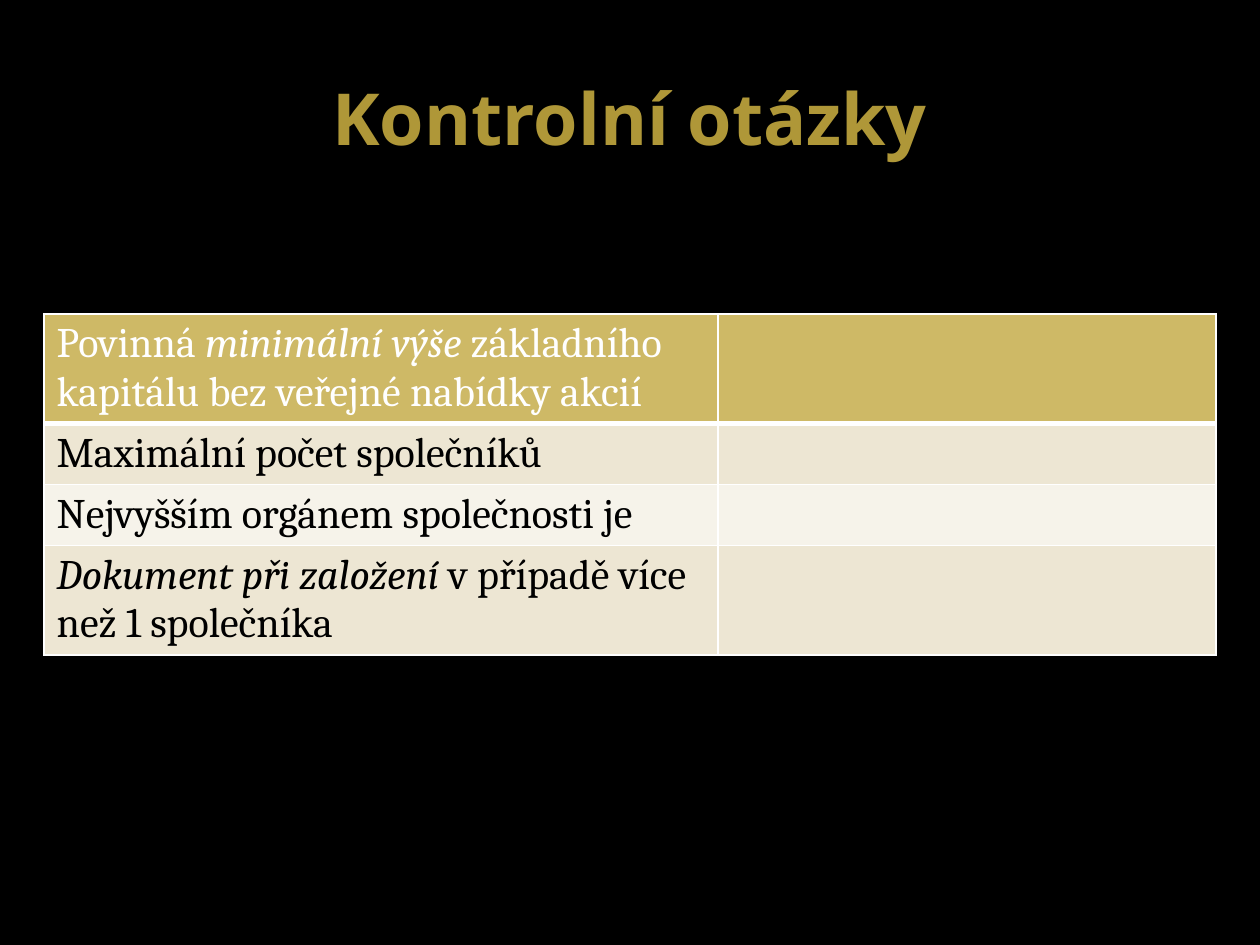
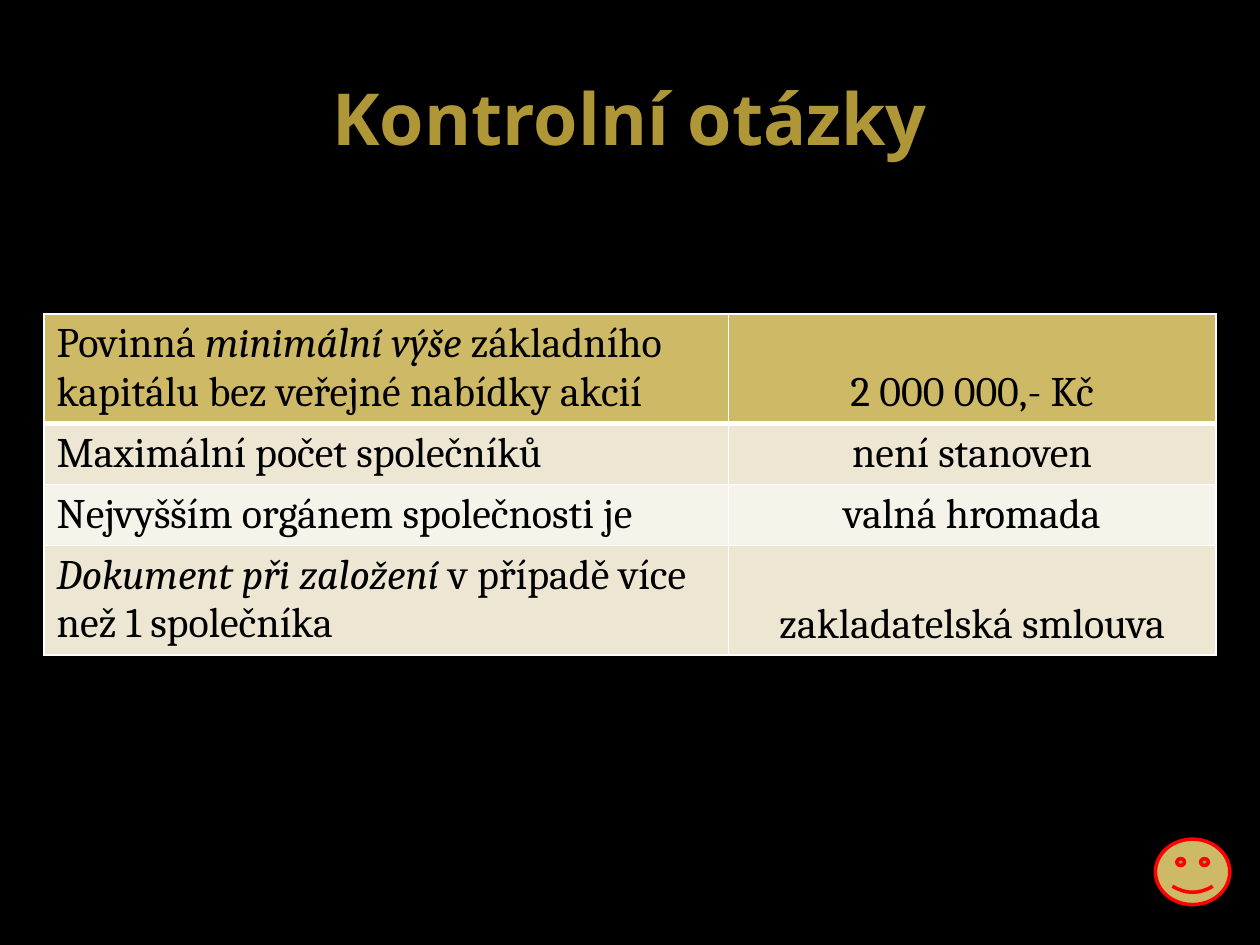
from collections import namedtuple
from dataclasses import dataclass

from lxml.etree import SubElement
from pptx import Presentation
from pptx.dml.color import RGBColor
from pptx.enum.shapes import MSO_SHAPE
from pptx.enum.text import MSO_ANCHOR, PP_ALIGN
from pptx.oxml.ns import qn
from pptx.util import Inches, Pt

Box = namedtuple("Box", "left top width height")


@dataclass(frozen=True)
class Theme:
    background: str = "000000"
    title: str = "AF9738"
    gold: str = "CEB966"
    sand: str = "EDE6D3"
    ivory: str = "F6F3EA"
    dark: str = "000000"
    light: str = "FFFFFF"
    red: str = "FF0000"
    title_font: str = "Open Sans"
    body_font: str = "Cambria"
    title_size: int = 41
    body_size: int = 24
    thin: int = 1
    thick: int = 3


THEME = Theme()
TITLE_BOX = Box(0.5, 0.3, 9, 1.25)
TABLE_BOX = Box(0.35, 2.49, 9.3, 2.7)
SMILEY_BOX = Box(9.17, 6.66, 0.59, 0.52)
ROW_HEIGHTS = (0.87, 0.48, 0.48, 0.87)
ROW_FILLS = (THEME.gold, THEME.sand, THEME.ivory, THEME.sand)

# Asterisks enclose italic words
QUESTIONS = (
    "Povinná *minimální výše *základního kapitálu bez veřejné nabídky akcií",
    "Maximální počet společníků",
    "Nejvyšším orgánem společnosti je",
    "*Dokument při založení *v případě více než 1 společníka",
)
ANSWERS = ("2 000 000,- Kč", "není stanoven", "valná hromada", "zakladatelská smlouva")
NO_ANSWERS = ("",) * len(QUESTIONS)


def colour(value):
    return RGBColor.from_string(value)


def paint(fill, value):
    fill.solid()
    fill.fore_color.rgb = colour(value)


def write(frame, text, *, font=THEME.body_font, size=THEME.body_size,
          ink=THEME.dark, bold=False, align=PP_ALIGN.LEFT):
    para = frame.paragraphs[0]
    para.alignment = align
    for index, part in enumerate(text.split("*")):
        if part:
            span = para.add_run()
            span.text = part
            span.font.name = font
            span.font.size = Pt(size)
            span.font.bold = bold
            span.font.italic = index % 2 == 1
            span.font.color.rgb = colour(ink)


def set_borders(cell, **widths):
    properties = cell._tc.get_or_add_tcPr()
    for side in "LRTB":
        line = SubElement(properties, qn(f"a:ln{side}"),
                          w=str(Pt(widths.get(side, THEME.thin))))
        fill = SubElement(line, qn("a:solidFill"))
        SubElement(fill, qn("a:srgbClr"), val=THEME.light)


def add_title(page, box, text):
    title = page.shapes.title
    title.left, title.top, title.width, title.height = map(Inches, box)
    title.text_frame.vertical_anchor = MSO_ANCHOR.MIDDLE
    write(title.text_frame, text, font=THEME.title_font, size=THEME.title_size,
          ink=THEME.title, bold=True, align=PP_ALIGN.CENTER)


def add_quiz_table(page, box, answers, question_width, header_ink):
    table = page.shapes.add_table(len(QUESTIONS), 2, *map(Inches, box)).table
    table.first_row = table.horz_banding = False
    table.columns[0].width = Inches(question_width)
    table.columns[1].width = Inches(box.width - question_width)

    for index, pair in enumerate(zip(QUESTIONS, answers)):
        table.rows[index].height = Inches(ROW_HEIGHTS[index])
        # A thick rule separates the first row from the rest
        rule = {0: {"B": THEME.thick}, 1: {"T": THEME.thick}}.get(index, {})
        ink = header_ink if index == 0 else THEME.dark
        for column, text in enumerate(pair):
            cell = table.cell(index, column)
            set_borders(cell, **rule)
            paint(cell.fill, ROW_FILLS[index])
            cell.vertical_anchor = MSO_ANCHOR.BOTTOM if column else MSO_ANCHOR.TOP
            write(cell.text_frame, text, ink=ink,
                  align=PP_ALIGN.CENTER if column else PP_ALIGN.LEFT)


def add_smiley(page, box):
    smiley = page.shapes.add_shape(MSO_SHAPE.SMILEY_FACE, *map(Inches, box))
    smiley.shadow.inherit = False
    paint(smiley.fill, THEME.gold)
    smiley.line.color.rgb = colour(THEME.red)
    smiley.line.width = Pt(2)


def add_quiz_page(deck, answers, question_width, header_ink):
    page = deck.slides.add_slide(deck.slide_layouts.get_by_name("Title Only"))
    add_title(page, TITLE_BOX, "Kontrolní otázky")
    add_quiz_table(page, TABLE_BOX, answers, question_width, header_ink)
    return page


def main():
    deck = Presentation()
    deck.slide_width, deck.slide_height = Inches(10), Inches(7.5)
    paint(deck.slide_master.background.fill, THEME.background)

    # Questions only, then the same questions with answers
    add_quiz_page(deck, NO_ANSWERS, 5.35, THEME.light)
    solved_page = add_quiz_page(deck, ANSWERS, 5.43, THEME.dark)
    add_smiley(solved_page, SMILEY_BOX)

    deck.save("out.pptx")


if __name__ == "__main__":
    main()
